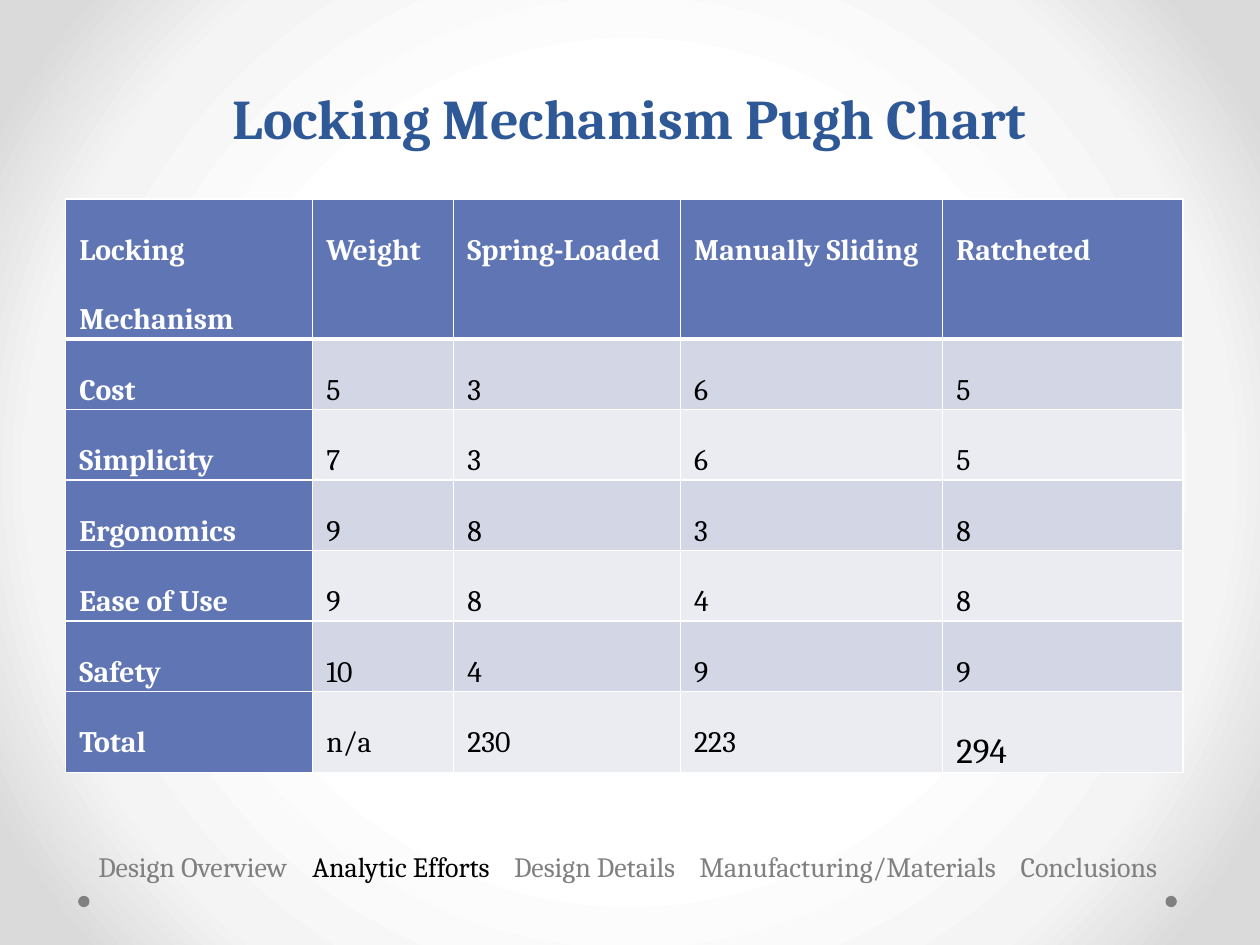
from dataclasses import dataclass

from lxml.etree import SubElement
from pptx import Presentation
from pptx.dml.color import RGBColor
from pptx.enum.shapes import MSO_SHAPE
from pptx.enum.text import MSO_ANCHOR, PP_ALIGN
from pptx.oxml.ns import qn
from pptx.util import Inches, Pt


@dataclass(frozen=True)
class Theme:
    font: str = "Cambria"
    title: str = "2F5897"
    accent: str = "6076B4"
    bands: tuple = ("D2D6E5", "EAECF2")
    light: str = "FFFFFF"
    dark: str = "000000"
    muted: str = "808080"
    glow: tuple = ((50, "FFFFFF"), (76, "F4F4F4"), (92, "DADADA"))
    title_size: int = 32
    cell_size: int = 17
    winner_size: int = 20
    nav_size: int = 16


class Deck:
    def __init__(self, theme):
        self.theme = theme
        self.prs = Presentation()
        self.prs.slide_width, self.prs.slide_height = Inches(10), Inches(7.5)
        self.s = self.prs.slides.add_slide(self.prs.slide_layouts[5])

    def run(self, p, text, size, color, bold=False):
        r = p.add_run()
        r.text = text
        r.font.name = self.theme.font
        r.font.size = Pt(size)
        r.font.bold = bold
        r.font.color.rgb = RGBColor.from_string(color)

    def background(self):
        fill = self.s.background.fill
        fill.gradient()
        grad = self.s.background._cSld.bg.bgPr.find(qn("a:gradFill"))
        for child in list(grad):
            grad.remove(child)
        stops = SubElement(grad, qn("a:gsLst"))
        for pos, color in self.theme.glow:
            gs = SubElement(stops, qn("a:gs"), pos=str(pos * 1000))
            SubElement(gs, qn("a:srgbClr"), val=color)
        shade = SubElement(grad, qn("a:path"), path="circle")
        SubElement(shade, qn("a:fillToRect"), {side: "50000" for side in "ltrb"})

    def dot(self, x, y, size):
        sp = self.s.shapes.add_shape(
            MSO_SHAPE.OVAL, Inches(x), Inches(y), Inches(size), Inches(size))
        sp.shadow.inherit = False
        sp.fill.solid()
        sp.fill.fore_color.rgb = RGBColor.from_string(self.theme.muted)
        sp.line.fill.background()

    def title(self, text, x, y, w, h):
        sp = self.s.shapes.title
        sp.left, sp.top, sp.width, sp.height = map(Inches, (x, y, w, h))
        tf = sp.text_frame
        tf.vertical_anchor = MSO_ANCHOR.BOTTOM
        p = tf.paragraphs[0]
        p.alignment = PP_ALIGN.CENTER
        p.line_spacing = Pt(58)
        self.run(p, text, self.theme.title_size, self.theme.title, True)

    def borders(self, cell, **widths):
        tcPr = cell._tc.get_or_add_tcPr()
        for side in "LRTB":
            ln = SubElement(tcPr, qn(f"a:ln{side}"), w=str(Pt(widths.get(side, 1))))
            fill = SubElement(ln, qn("a:solidFill"))
            SubElement(fill, qn("a:srgbClr"), val=self.theme.light)

    def cell(self, cell, text, i, j, size):
        t = self.theme
        head = i == 0 or j == 0
        cell.margin_left = cell.margin_right = Inches(0.11)
        cell.margin_top = cell.margin_bottom = 0
        self.borders(cell, T=3 if i == 1 else 1, B=3 if i == 0 else 1)
        cell.fill.solid()
        cell.fill.fore_color.rgb = RGBColor.from_string(
            t.accent if head else t.bands[(i - 1) % 2])
        p = cell.text_frame.paragraphs[0]
        p.line_spacing = 2.0
        self.run(p, text, size, t.light if head else t.dark, head)

    def table(self, rows, x, y, widths, heights, winner):
        tbl = self.s.shapes.add_table(
            len(rows), len(widths), Inches(x), Inches(y),
            Inches(sum(widths)), Inches(sum(heights))).table
        for col, w in zip(tbl.columns, widths):
            col.width = Inches(w)
        for i, (values, h) in enumerate(zip(rows, heights)):
            tbl.rows[i].height = Inches(h)
            for j, text in enumerate(values):
                size = self.theme.winner_size if (i, j) == winner else self.theme.cell_size
                self.cell(tbl.cell(i, j), text, i, j, size)

    def nav(self, sections, current, x, y, w, h, indent, tabs):
        tf = self.s.shapes.add_textbox(*map(Inches, (x, y, w, h))).text_frame
        tf.word_wrap = True
        tf.margin_left, tf.margin_right = Inches(indent), 0
        p = tf.paragraphs[0]
        p.alignment = PP_ALIGN.LEFT
        stops = SubElement(p._p.get_or_add_pPr(), qn("a:tabLst"))
        for pos in tabs:
            SubElement(stops, qn("a:tab"), pos=str(Inches(pos)), algn="l")
        for i, name in enumerate(sections):
            color = self.theme.dark if name == current else self.theme.muted
            self.run(p, f"\t{name}" if i else name, self.theme.nav_size, color)


def main():
    deck = Deck(Theme())
    deck.background()
    for x in (9.25, 0.62):
        deck.dot(x, 7.11, 0.09)
    deck.title("Locking Mechanism Pugh Chart", 0.5, 0.25, 9, 1)
    rows = [
        ("Locking Mechanism", "Weight", "Spring-Loaded", "Manually Sliding", "Ratcheted"),
        ("Cost", "5", "3", "6", "5"),
        ("Simplicity", "7", "3", "6", "5"),
        ("Ergonomics", "9", "8", "3", "8"),
        ("Ease of Use", "9", "8", "4", "8"),
        ("Safety", "10", "4", "9", "9"),
        ("Total", "n/a", "230", "223", "294"),
    ]
    deck.table(rows, 0.52, 1.58, (1.96, 1.12, 1.8, 2.08, 1.91),
               [1.11] + [0.56] * 6, winner=(6, 4))
    sections = ("Design Overview", "Analytic Efforts", "Design Details",
                "Manufacturing/Materials", "Conclusions")
    deck.nav(sections, "Analytic Efforts", 0.2, 6.69, 9.58, 0.37,
             indent=0.58, tabs=(1.7, 3.3, 4.77, 7.32))
    deck.prs.save("out.pptx")


if __name__ == "__main__":
    main()
